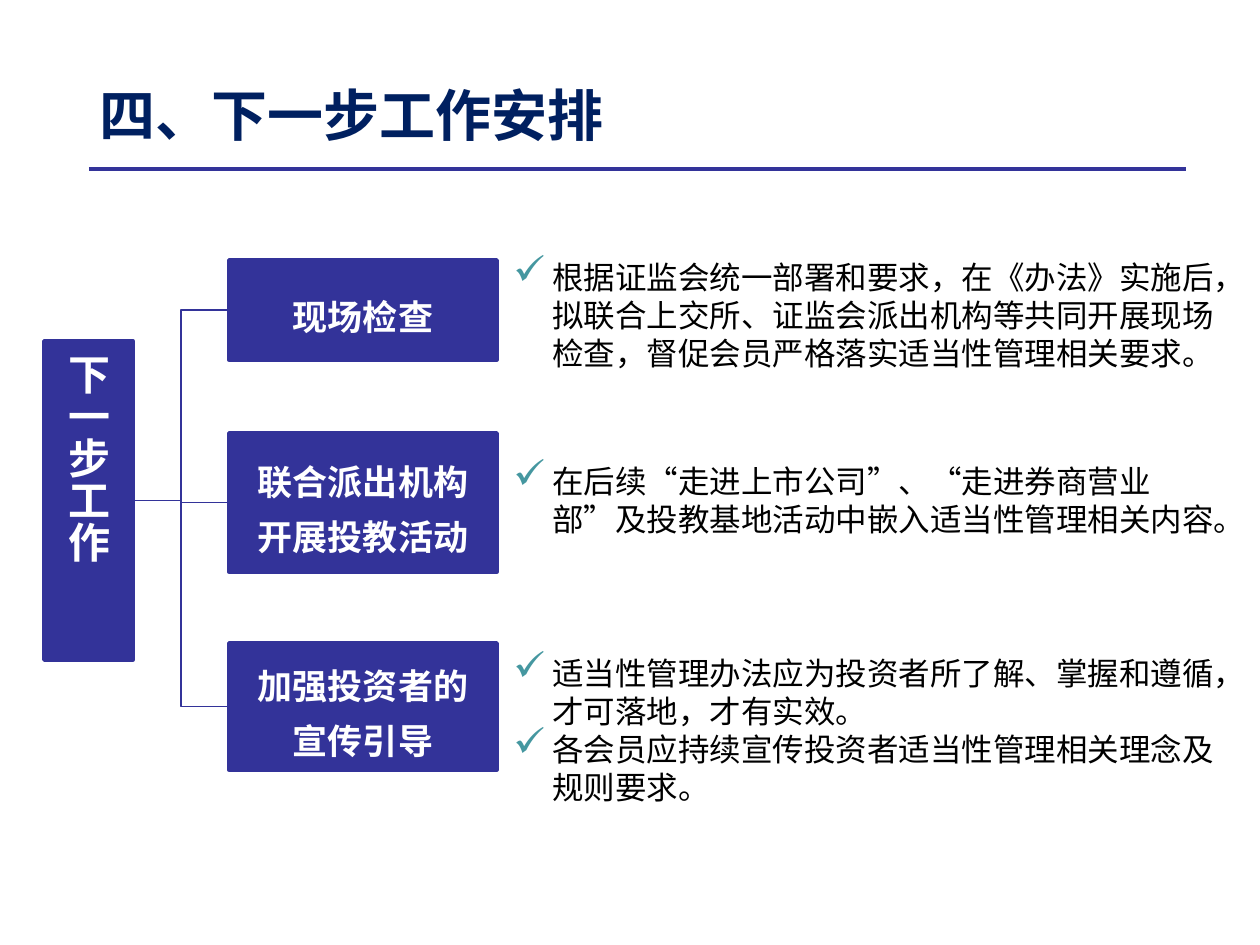
from dataclasses import dataclass

import pptx
import pptx.dml.color
import pptx.enum.shapes
import pptx.enum.text
import pptx.oxml
import pptx.oxml.ns
import pptx.util
from lxml import etree

PX = 914400 / 126
FONT = "Noto Sans CJK SC"
INDIGO, NAVY, TEAL, WHITE, BLACK = "333399", "002060", "4597A0", "FFFFFF", "000000"
BRANCH_LEFT, BRANCH_WIDTH = 229, 268
NOTE_LEFT, NOTE_WIDTH = 432, 798


@dataclass
class Branch:
    label: str
    top: int
    height: int
    note_top: int
    note_height: int
    notes: list[str]


BRANCHES = [
    Branch("现场检查", 260, 100, 252, 127, [
        "根据证监会统一部署和要求，在《办法》实施后，拟联合上交所、证监会派出机构等"
        "共同开展现场检查，督促会员严格落实适当性管理相关要求。"]),
    Branch("联合派出机构开展投教活动", 433, 139, 456, 89, [
        "在后续“走进上市公司”、“走进券商营业部”及投教基地活动中嵌入适当性管理相关内容。"]),
    Branch("加强投资者的宣传引导", 643, 127, 648, 165, [
        "适当性管理办法应为投资者所了解、掌握和遵循，才可落地，才有实效。",
        "各会员应持续宣传投资者适当性管理相关理念及规则要求。"]),
]


def px(length: int) -> int:
    return round(length * PX)


def color(value: str) -> pptx.dml.color.RGBColor:
    return pptx.dml.color.RGBColor.from_string(value)


def set_font(paragraph, size: int, font_color: str, bold: bool = False) -> None:
    font = paragraph.font
    font.size, font.bold, font.name = pptx.util.Pt(size), bold, FONT
    font.color.rgb = color(font_color)
    properties = paragraph._p.get_or_add_pPr().find(pptx.oxml.ns.qn("a:defRPr"))
    etree.SubElement(properties, pptx.oxml.ns.qn("a:ea"), typeface=FONT)


def add_check_bullet(paragraph) -> None:
    properties = paragraph._p.get_or_add_pPr()
    properties.set("marL", str(px(108)))
    properties.set("indent", str(px(-39)))
    namespace = pptx.oxml.ns.nsdecls("a")
    for xml in (f'<a:buClr {namespace}><a:srgbClr val="{TEAL}"/></a:buClr>',
                f'<a:buSzPct {namespace} val="129000"/>',
                f'<a:buChar {namespace} char="✓"/>'):
        properties.append(pptx.oxml.parse_xml(xml))


def add_text_box(slide, left: int, top: int, width: int, height: int):
    shape = slide.shapes.add_textbox(px(left), px(top), px(width), px(height))
    shape.text_frame.word_wrap = True
    shape.text_frame.auto_size = pptx.enum.text.MSO_AUTO_SIZE.SHAPE_TO_FIT_TEXT
    return shape


def add_box(slide, label: str, left: int, top: int, width: int, height: int, size: int):
    shape = slide.shapes.add_shape(pptx.enum.shapes.MSO_SHAPE.RECTANGLE,
                                   px(left), px(top), px(width), px(height))
    shape.shadow.inherit = False
    shape.fill.solid()
    shape.fill.fore_color.rgb = color(INDIGO)
    shape.line.color.rgb = color(INDIGO)
    shape.line.width = pptx.util.Pt(2)
    frame = shape.text_frame
    frame.word_wrap = True
    frame.vertical_anchor = pptx.enum.text.MSO_ANCHOR.MIDDLE
    paragraph = frame.paragraphs[0]
    paragraph.text = label
    paragraph.alignment = pptx.enum.text.PP_ALIGN.CENTER
    set_font(paragraph, size, WHITE, bold=True)
    return shape


def add_line(slide, kind, start: tuple[int, int], end: tuple[int, int], width: float):
    connector = slide.shapes.add_connector(kind, *map(px, start + end))
    connector.line.color.rgb = color(INDIGO)
    connector.line.width = pptx.util.Pt(width)
    etree.SubElement(connector._element.spPr, pptx.oxml.ns.qn("a:effectLst"))
    return connector


def add_notes(slide, branch: Branch) -> None:
    frame = add_text_box(slide, NOTE_LEFT, branch.note_top, NOTE_WIDTH,
                         branch.note_height).text_frame
    for index, note in enumerate(branch.notes):
        paragraph = frame.add_paragraph() if index else frame.paragraphs[0]
        paragraph.text = note
        paragraph.level = 1
        add_check_bullet(paragraph)
        set_font(paragraph, 18, BLACK)


def main() -> None:
    presentation = pptx.Presentation()
    presentation.slide_width, presentation.slide_height = px(1260), px(945)
    slide = presentation.slides.add_slide(presentation.slide_layouts[6])
    connector_type = pptx.enum.shapes.MSO_CONNECTOR

    # Title and rule
    title = add_text_box(slide, 89, 76, 650, 78).text_frame
    title.margin_left = title.margin_right = px(10)
    title.margin_top = title.margin_bottom = px(5)
    title.paragraphs[0].text = "四、下一步工作安排"
    set_font(title.paragraphs[0], 32, NAVY, bold=True)
    add_line(slide, connector_type.STRAIGHT, (89, 169), (1186, 169), 2)

    # Root of the tree, with vertical text
    root = add_box(slide, "下一步工作", 44, 341, 89, 319, 24)
    root.text_frame._txBody.bodyPr.set("vert", "eaVert")

    # Branches, their connectors and notes
    for branch in BRANCHES:
        box = add_box(slide, branch.label, BRANCH_LEFT, branch.top,
                      BRANCH_WIDTH, branch.height, 20)
        box.text_frame.paragraphs[0].line_spacing = 1.3
        connector = add_line(slide, connector_type.ELBOW, (133, 501),
                             (BRANCH_LEFT, branch.top + branch.height // 2), 0.75)
        connector.begin_connect(root, 3)
        connector.end_connect(box, 1)
        add_notes(slide, branch)

    presentation.save("out.pptx")


if __name__ == "__main__":
    main()
